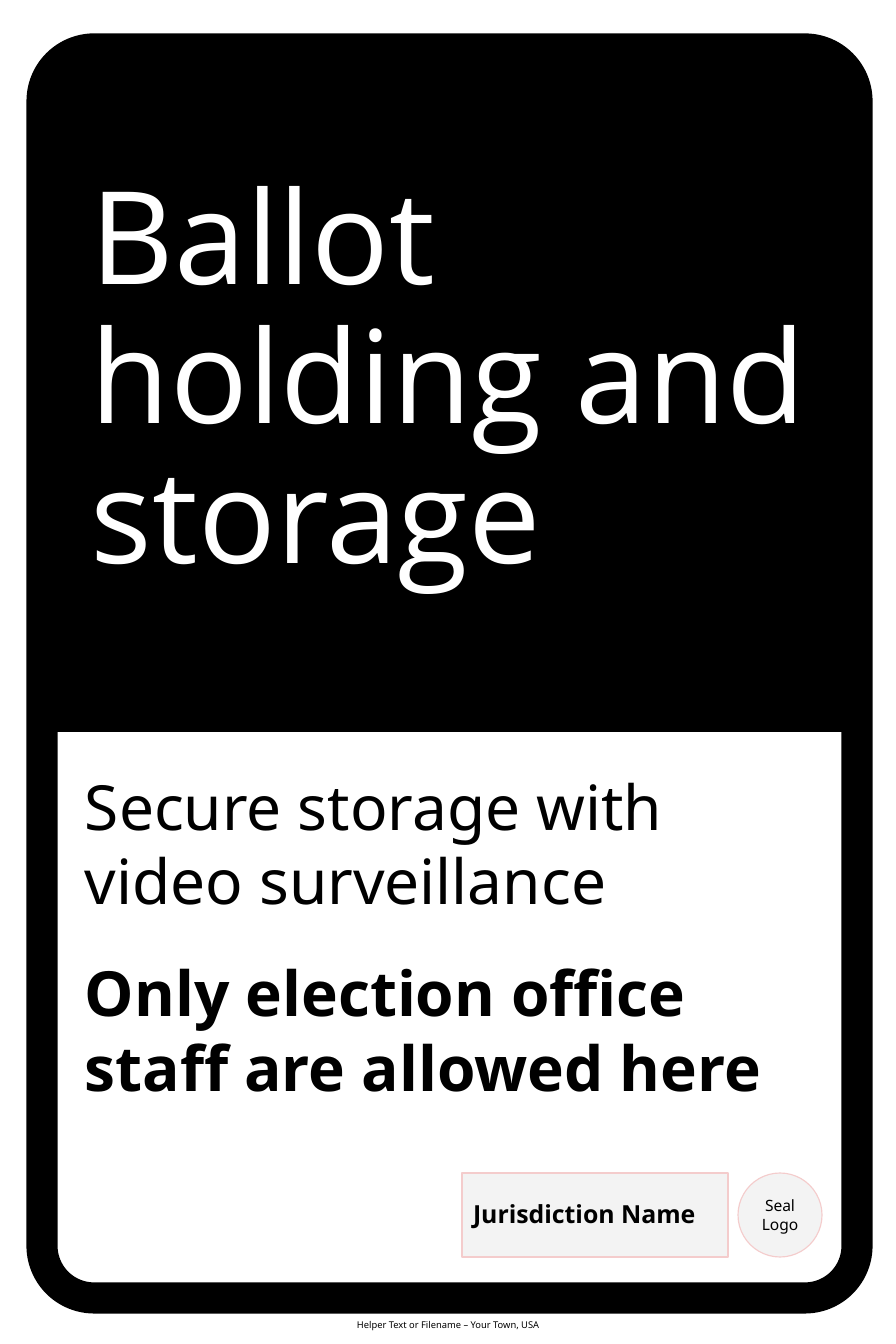
from pptx import Presentation
from pptx import util as u
from pptx.dml.color import RGBColor
from pptx.enum import shapes, text

SCALE = 914400 / 112
COLORS = {"ink": "000000", "paper": "FFFFFF", "panel": "F3F3F3", "outline": "F4CCCC"}
SHAPE = shapes.MSO_SHAPE


def px(length):
    """Turn whole pixels into EMU."""
    return u.Emu(round(length * SCALE))


def color(name):
    """Look up a colour by name."""
    return RGBColor.from_string(COLORS[name])


def add_box(slide, kind, at, fill=None, line=None, weight=0.75, adjust=()):
    """Add a preset shape with its fill and outline."""
    box = slide.shapes.add_shape(kind, *map(px, at))
    box.shadow.inherit = False
    for index, value in enumerate(adjust):
        box.adjustments[index] = value
    if fill:
        box.fill.solid()
        box.fill.fore_color.rgb = color(fill)
    else:
        box.fill.background()
    if line:
        box.line.color.rgb = color(line)
        box.line.width = u.Pt(weight)
    else:
        box.line.fill.background()
    return box


def write(holder, wording, size, font="Noto Sans", ink="ink", bold=False,
          align=text.PP_ALIGN.LEFT, anchor=text.MSO_ANCHOR.MIDDLE,
          spacing=1.0, before=0, inset=11, more=False):
    """Write one formatted paragraph into a shape."""
    frame = holder.text_frame
    frame.word_wrap = True
    frame.auto_size = text.MSO_AUTO_SIZE.NONE
    frame.vertical_anchor = anchor
    frame.margin_left = frame.margin_right = px(11)
    frame.margin_top = frame.margin_bottom = px(inset)
    paragraph = frame.add_paragraph() if more else frame.paragraphs[0]
    paragraph.alignment = align
    paragraph.line_spacing = spacing
    paragraph.space_before = u.Pt(before)
    run = paragraph.add_run()
    run.text = wording
    run.font.size = u.Pt(size)
    run.font.name = font
    run.font.bold = bold
    run.font.color.rgb = color(ink)


def add_text_box(slide, at):
    """Add an empty text box."""
    return slide.shapes.add_textbox(*map(px, at))


def place_title(slide, at, wording, **style):
    """Move the title above the shapes drawn so far and write it."""
    title = slide.shapes.title
    title.left, title.top, title.width, title.height = map(px, at)
    slide.shapes._spTree.append(title._element)
    write(title, wording, **style)


def main():
    """Build the ballot storage sign."""
    deck = Presentation()
    deck.slide_width, deck.slide_height = px(896), px(1344)
    sign = deck.slides.add_slide(deck.slide_layouts[5])
    center = text.PP_ALIGN.CENTER

    add_box(sign, SHAPE.ROUNDED_RECTANGLE, (42, 49, 815, 1249),
            line="ink", weight=20, adjust=[0.064])
    add_box(sign, SHAPE.SNIP_2_SAME_RECTANGLE, (42, 46, 811, 686),
            fill="ink", adjust=[0.07, 0])
    place_title(sign, (80, 92, 743, 580), "Ballot holding and storage", size=83,
                font="Open Sans", ink="paper", spacing=0.9, inset=6)

    notice = add_text_box(sign, (74, 757, 743, 362))
    top = text.MSO_ANCHOR.TOP
    write(notice, "Secure storage with video surveillance", 40, anchor=top, before=10)
    write(notice, "Only election office staff are allowed here", 40, anchor=top,
          bold=True, before=24, more=True)

    helper = add_text_box(sign, (168, 1314, 560, 22))
    write(helper, "Helper Text or Filename – Your Town, USA", 6, align=center)

    jurisdiction = add_box(sign, SHAPE.RECTANGLE, (462, 1173, 266, 84), "panel", "outline")
    write(jurisdiction, "Jurisdiction Name", 16, bold=True, spacing=0.9)
    seal = add_box(sign, SHAPE.OVAL, (738, 1173, 84, 84), "panel", "outline")
    write(seal, "Seal Logo", 10, align=center)

    deck.save("out.pptx")


if __name__ == "__main__":
    main()
